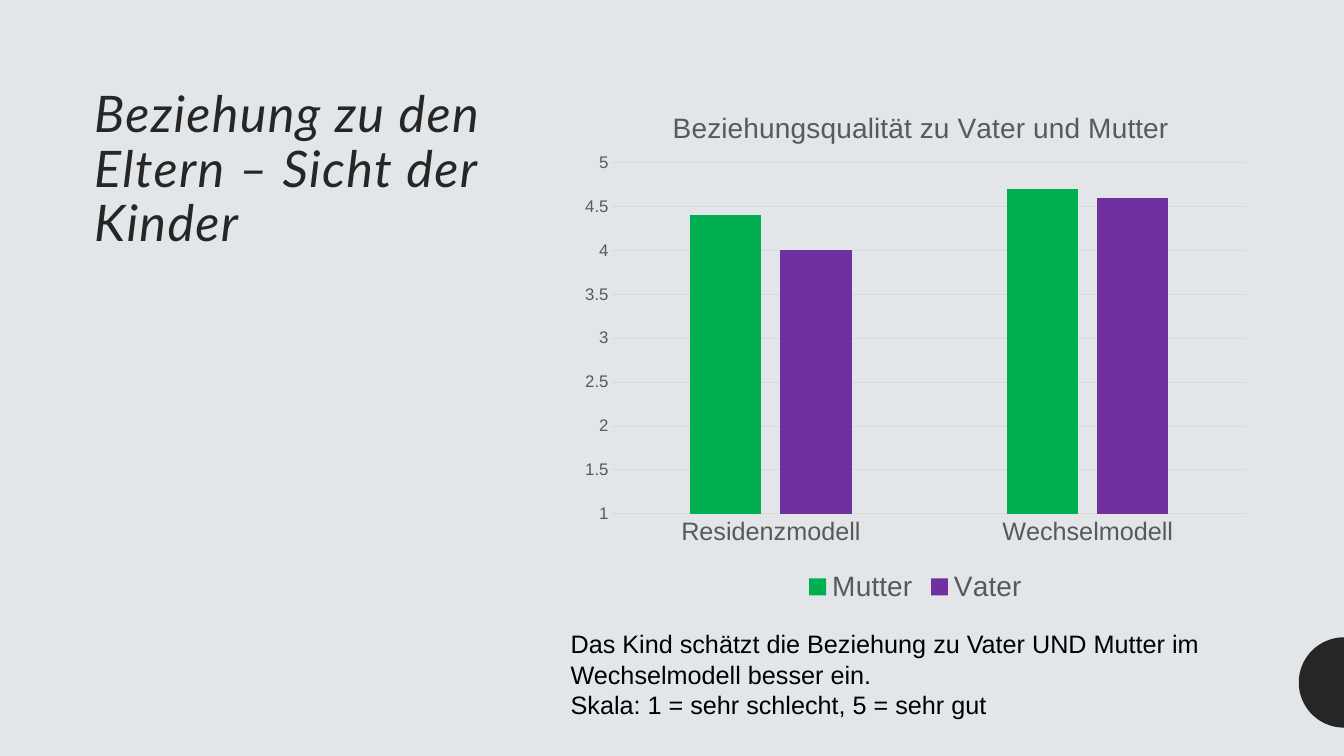
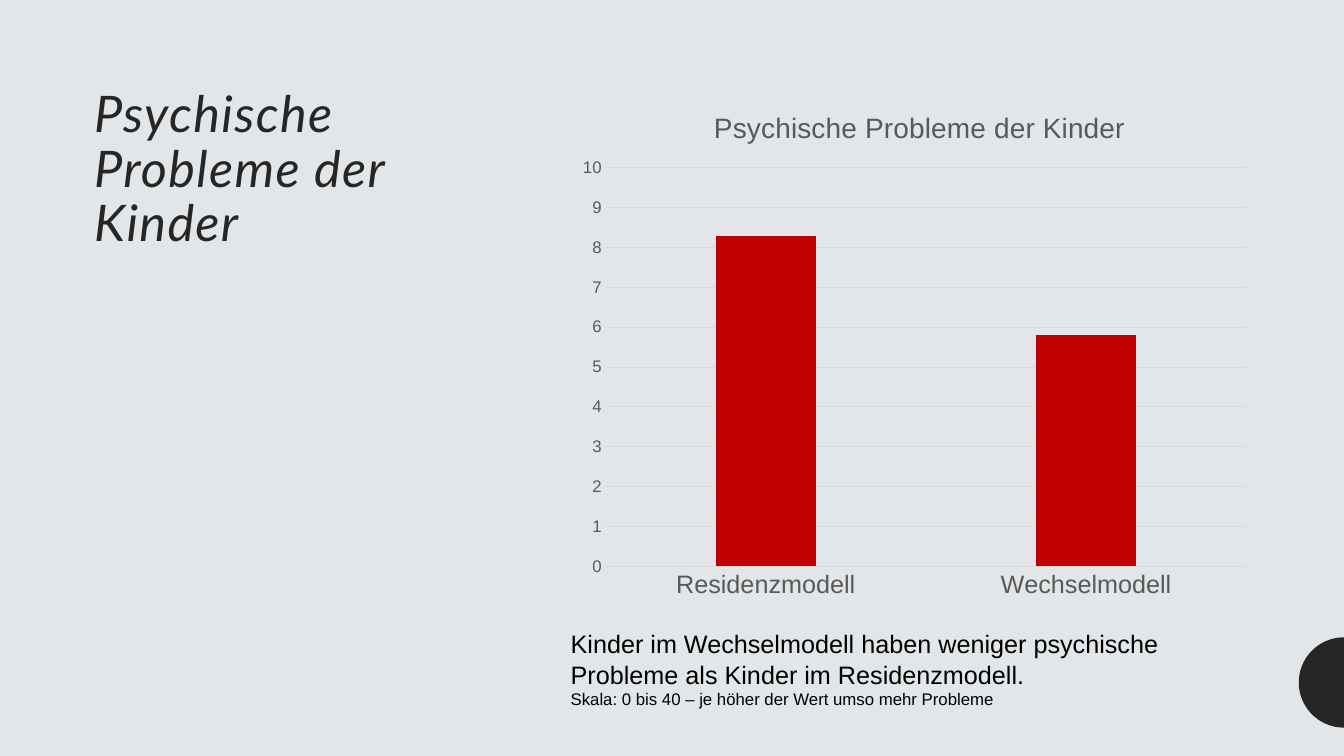
from math import cos, pi, sin

from pptx import Presentation
from pptx.chart.data import CategoryChartData
from pptx.dml.color import RGBColor
from pptx.enum.chart import XL_CHART_TYPE as ChartType, XL_LEGEND_POSITION as LegendPosition
from pptx.enum.chart import XL_TICK_MARK as TickMark
from pptx.enum.text import MSO_ANCHOR as Anchor, MSO_AUTO_SIZE as AutoSize, PP_ALIGN as Align
from pptx.oxml import parse_xml
from pptx.oxml.ns import nsdecls, qn
from pptx.util import Pt

# Content; the title and plot fractions are relative to the chart frame
CATEGORIES = ["Residenzmodell", "Wechselmodell"]
PAGES = [
    {
        "title": "Beziehung zu den Eltern – Sicht der Kinder",
        "chart_title": "Beziehungsqualität zu Vater und Mutter",
        "series": [("Mutter", [4.4, 4.7], "00B050"), ("Vater", [4, 4.6], "7030A0")],
        "scale": (1, 5, 0.5),
        "legend": True,
        "title_at": {"x": 0.14, "y": 0.04},
        "plot_at": {"x": 0.06, "y": 0.15, "w": 0.92, "h": 0.67},
        "caption": [
            ("Das Kind schätzt die Beziehung zu Vater UND Mutter im Wechselmodell besser ein.", 18),
            ("Skala: 1 = sehr schlecht, 5 = sehr gut", 18),
        ],
        "caption_height": 73,
    },
    {
        "title": "Psychische Probleme der Kinder",
        "chart_title": "Psychische Probleme der Kinder",
        "series": [("Series 1", [8.3, 5.8], "C00000")],
        "scale": (0, 10, 1),
        "legend": False,
        "title_at": {"x": 0.2, "y": 0.04},
        "plot_at": {"x": 0.05, "y": 0.16, "w": 0.93, "h": 0.76},
        "caption": [
            ("Kinder im Wechselmodell haben weniger psychische Probleme als Kinder im Residenzmodell.", 18),
            ("Skala: 0 bis 40 – je höher der Wert umso mehr Probleme", 12),
        ],
        "caption_height": 65.5,
    },
]

# Shared style
WIDTH, HEIGHT = 960, 540
BACKGROUND, DARK, BLACK = "E2E6E8", "262626", "000000"
CHART_TEXT, CHART_LINE = "595959", "D9D9D9"
TITLE_FONT, TEXT_FONT = "Lato", "Arial"
TITLE_BOX = (60, 60, 302, 374.5)
CHART_BOX = (408, 60, 492, 374.5)
CAPTION_LEFT, CAPTION_TOP, CAPTION_WIDTH = 400.5, 445.5, 470
DISC_CENTER_Y, DISC_RADIUS, DISC_STEPS = 487.5, 32.25, 48


def color(value):
    return RGBColor.from_string(value)


def paint(fill, value):
    fill.solid()
    fill.fore_color.rgb = color(value)


def style_font(font, size, value, name=TEXT_FONT):
    font.size, font.name, font.bold = Pt(size), name, False
    font.color.rgb = color(value)


def style_line(line, value):
    line.width = Pt(0.75)
    line.color.rgb = color(value)


def set_layout(part, index, fractions, inner=False):
    """Give a chart title or plot area a manual layout."""
    old = part.find(qn("c:layout"))
    if old is not None:
        part.remove(old)
    target = '<c:layoutTarget val="inner"/>' if inner else ""
    modes = "".join(f'<c:{axis}Mode val="edge"/>' for axis in "xy")
    values = "".join(f'<c:{key} val="{value}"/>' for key, value in fractions.items())
    part.insert(index, parse_xml(
        f'<c:layout {nsdecls("c")}><c:manualLayout>{target}{modes}{values}'
        "</c:manualLayout></c:layout>"))


def add_half_disc(page, layout):
    """Draw the half disc at the right edge and move it to the layout."""
    angles = [pi / 2 + pi * step / DISC_STEPS for step in range(DISC_STEPS + 1)]
    points = [(Pt(WIDTH + DISC_RADIUS * cos(angle)), Pt(DISC_CENTER_Y + DISC_RADIUS * sin(angle)))
              for angle in angles]
    builder = page.shapes.build_freeform(*points[0])
    builder.add_line_segments(points[1:], close=True)
    disc = builder.convert_to_shape()
    disc.shadow.inherit = False
    paint(disc.fill, DARK)
    disc.line.fill.background()
    layout.shapes.element.append(disc.element)


def prepare_layout(deck):
    paint(deck.slide_master.background.fill, BACKGROUND)
    layout = deck.slide_layouts.get_by_name("Title Only")
    title = next(box for box in layout.placeholders if box.placeholder_format.idx == 0)
    title.left, title.top, title.width, title.height = map(Pt, TITLE_BOX)
    title.text_frame.vertical_anchor = Anchor.TOP
    title.text_frame.auto_size = AutoSize.NONE
    return layout


def fill_title(page, text):
    frame = page.shapes.title.text_frame
    frame.text = text
    para = frame.paragraphs[0]
    para.alignment, para.line_spacing = Align.LEFT, 0.9
    span = para.runs[0]
    style_font(span.font, 36, DARK, TITLE_FONT)
    span.font.italic = True
    span.font._element.set("spc", "100")


def add_column_chart(page, content):
    data = CategoryChartData()
    data.categories = CATEGORIES
    for name, values, _ in content["series"]:
        data.add_series(name, values)
    chart = page.shapes.add_chart(ChartType.COLUMN_CLUSTERED, *map(Pt, CHART_BOX), data).chart
    style_font(chart.font, 10, BLACK)

    # Title and legend
    chart.has_title = True
    frame = chart.chart_title.text_frame
    frame.text = content["chart_title"]
    style_font(frame.paragraphs[0].runs[0].font, 20, CHART_TEXT)
    set_layout(chart.chart_title.element, 1, content["title_at"])
    chart.has_legend = content["legend"]
    if chart.has_legend:
        chart.legend.position = LegendPosition.BOTTOM
        chart.legend.include_in_layout = False
        style_font(chart.legend.font, 20, CHART_TEXT)

    # Axes
    for axis, size in ((chart.category_axis, 18), (chart.value_axis, 12)):
        axis.major_tick_mark = axis.minor_tick_mark = TickMark.NONE
        style_font(axis.tick_labels.font, size, CHART_TEXT)
    style_line(chart.category_axis.format.line, CHART_LINE)
    values = chart.value_axis
    values.format.line.fill.background()
    values.minimum_scale, values.maximum_scale, values.major_unit = content["scale"]
    style_line(values.major_gridlines.format.line, CHART_LINE)

    # Columns
    plot = chart.plots[0]
    plot.gap_width, plot.overlap, plot.vary_by_categories = 219, -27, False
    for series, (_, _, fill) in zip(plot.series, content["series"]):
        paint(series.format.fill, fill)
    set_layout(chart.element.find(".//" + qn("c:plotArea")), 0, content["plot_at"], inner=True)


def add_caption(page, lines, height):
    box = page.shapes.add_textbox(*map(Pt, (CAPTION_LEFT, CAPTION_TOP, CAPTION_WIDTH, height)))
    frame = box.text_frame
    frame.word_wrap, frame.auto_size = True, AutoSize.SHAPE_TO_FIT_TEXT
    frame.text = "\n".join(text for text, _ in lines)
    for para, (_, size) in zip(frame.paragraphs, lines):
        style_font(para.runs[0].font, size, BLACK)


def main():
    deck = Presentation()
    deck.slide_width, deck.slide_height = Pt(WIDTH), Pt(HEIGHT)
    layout = prepare_layout(deck)
    for content in PAGES:
        page = deck.slides.add_slide(layout)
        fill_title(page, content["title"])
        add_column_chart(page, content)
        add_caption(page, content["caption"], content["caption_height"])
    add_half_disc(deck.slides[0], layout)
    deck.save("out.pptx")


if __name__ == "__main__":
    main()
